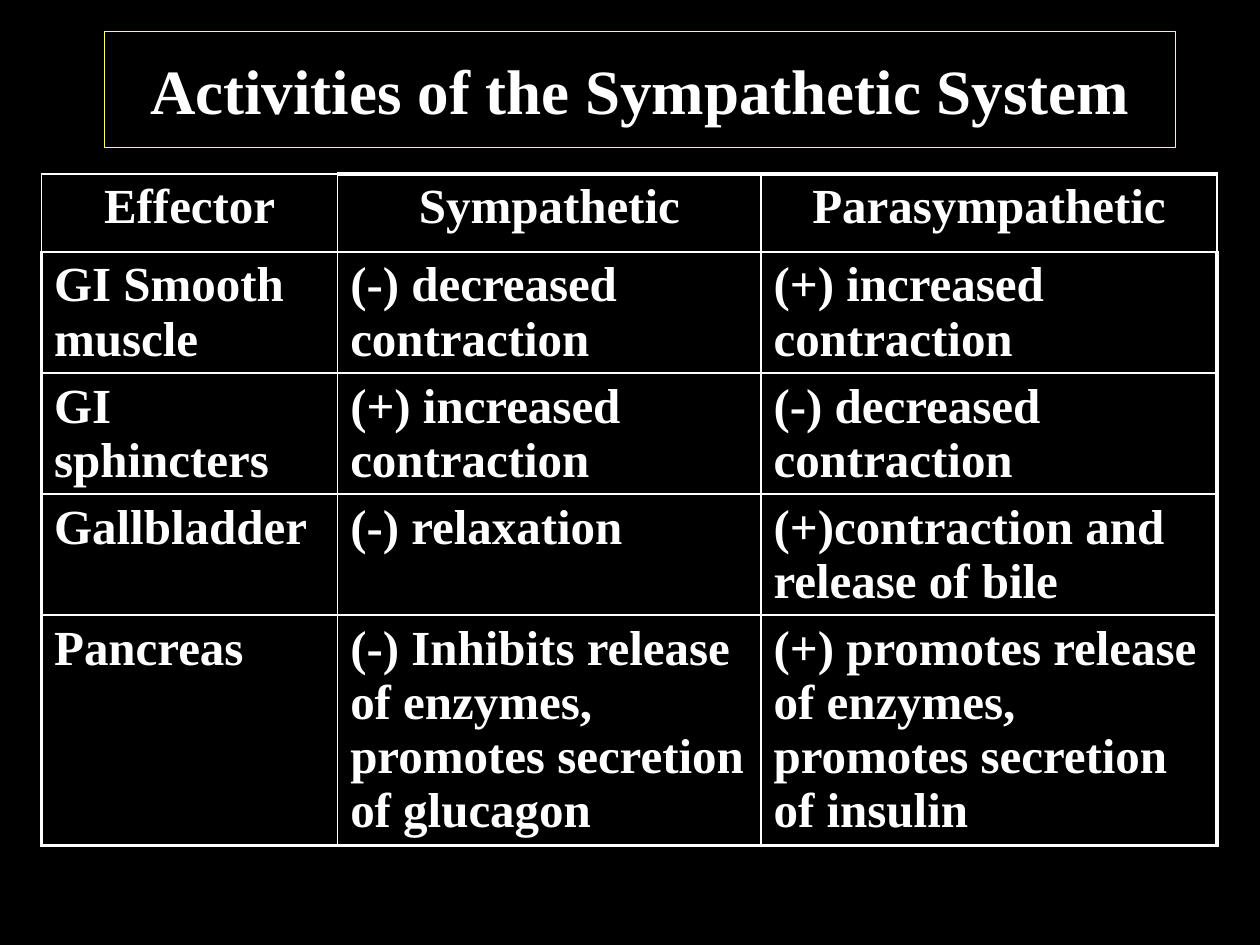
import pptx
import pptx.dml.color
import pptx.enum.text
import pptx.oxml
import pptx.oxml.ns
import pptx.util
from pptx.util import Inches

HUES = {"back": "000000", "text": "FFFFFF", "rule": "FFFFFF", "frame": "FFFF66"}
ALIGN = pptx.enum.text.PP_ALIGN
THIN, THICK = 1, 2.25

HEAD = "Activities of the Sympathetic System"
ROWS = [
    ["Effector", "Sympathetic", "Parasympathetic"],
    ["GI Smooth muscle", "(-) decreased contraction", "(+) increased contraction"],
    ["GI sphincters", "(+) increased contraction", "(-) decreased contraction"],
    ["Gallbladder", "(-) relaxation", "(+)contraction and release of bile"],
    ["Pancreas",
     "(-) Inhibits release of enzymes, promotes secretion of glucagon",
     "(+) promotes release of enzymes, promotes secretion of insulin"],
]
WIDTHS = [2.35, 3.36, 3.62]
HEIGHTS = [0.62, 0.96, 0.96, 0.96, 1.83]


def hue(name):
    return pptx.dml.color.RGBColor.from_string(HUES[name])


def paint(fill, name):
    fill.solid()
    fill.fore_color.rgb = hue(name)


def write(frame, text, size, align):
    frame.text = text
    para = frame.paragraphs[0]
    para.alignment = align
    font = para.runs[0].font
    look = {"name": "Times New Roman", "size": pptx.util.Pt(size), "bold": True}
    for key, value in look.items():
        setattr(font, key, value)
    font.color.rgb = hue("text")


def edge(cell, weights):
    """Draw cell borders; they must come before the fill in the XML."""
    props = cell._tc.get_or_add_tcPr()
    for spot, (side, weight) in enumerate(weights.items()):
        props.insert(spot, pptx.oxml.parse_xml(
            f'<a:ln{side} {pptx.oxml.ns.nsdecls("a")} w="{pptx.util.Pt(weight)}">'
            f'<a:solidFill><a:srgbClr val="{HUES["rule"]}"/></a:solidFill>'
            f'</a:ln{side}>'))


def add_title(slide, box):
    title = slide.shapes.title
    for key, value in zip(("left", "top", "width", "height"), box):
        setattr(title, key, Inches(value))
    paint(title.fill, "back")
    title.line.color.rgb = hue("frame")
    title.line.width = pptx.util.Pt(0.75)
    title.text_frame.vertical_anchor = pptx.enum.text.MSO_ANCHOR.MIDDLE
    write(title.text_frame, HEAD, 36, ALIGN.CENTER)


def add_grid(slide, box):
    grid = slide.shapes.add_table(len(ROWS), len(WIDTHS), *map(Inches, box)).table
    for col, width in zip(grid.columns, WIDTHS):
        col.width = Inches(width)
    for row, height in zip(grid.rows, HEIGHTS):
        row.height = Inches(height)
    for r, texts in enumerate(ROWS):
        for c, text in enumerate(texts):
            cell = grid.cell(r, c)
            paint(cell.fill, "back")
            write(cell.text_frame, text, 28, ALIGN.LEFT if r else ALIGN.CENTER)
            # Outer edges are thick, save around the header's first cell
            thick = {
                "L": r > 0 and c == 0,
                "R": r > 0 and c == len(WIDTHS) - 1,
                "T": r == 0 and c > 0,
                "B": r == len(ROWS) - 1,
            }
            edge(cell, {side: THICK if on else THIN for side, on in thick.items()})


def main():
    deck = pptx.Presentation()
    deck.slide_width, deck.slide_height = Inches(10), Inches(7.5)
    slide = deck.slides.add_slide(deck.slide_layouts[5])
    paint(slide.background.fill, "back")
    # Framed title
    add_title(slide, (0.83, 0.25, 8.5, 0.92))
    # Table of effects
    add_grid(slide, (0.33, 1.38, sum(WIDTHS), sum(HEIGHTS)))
    deck.save("out.pptx")


if __name__ == "__main__":
    main()
